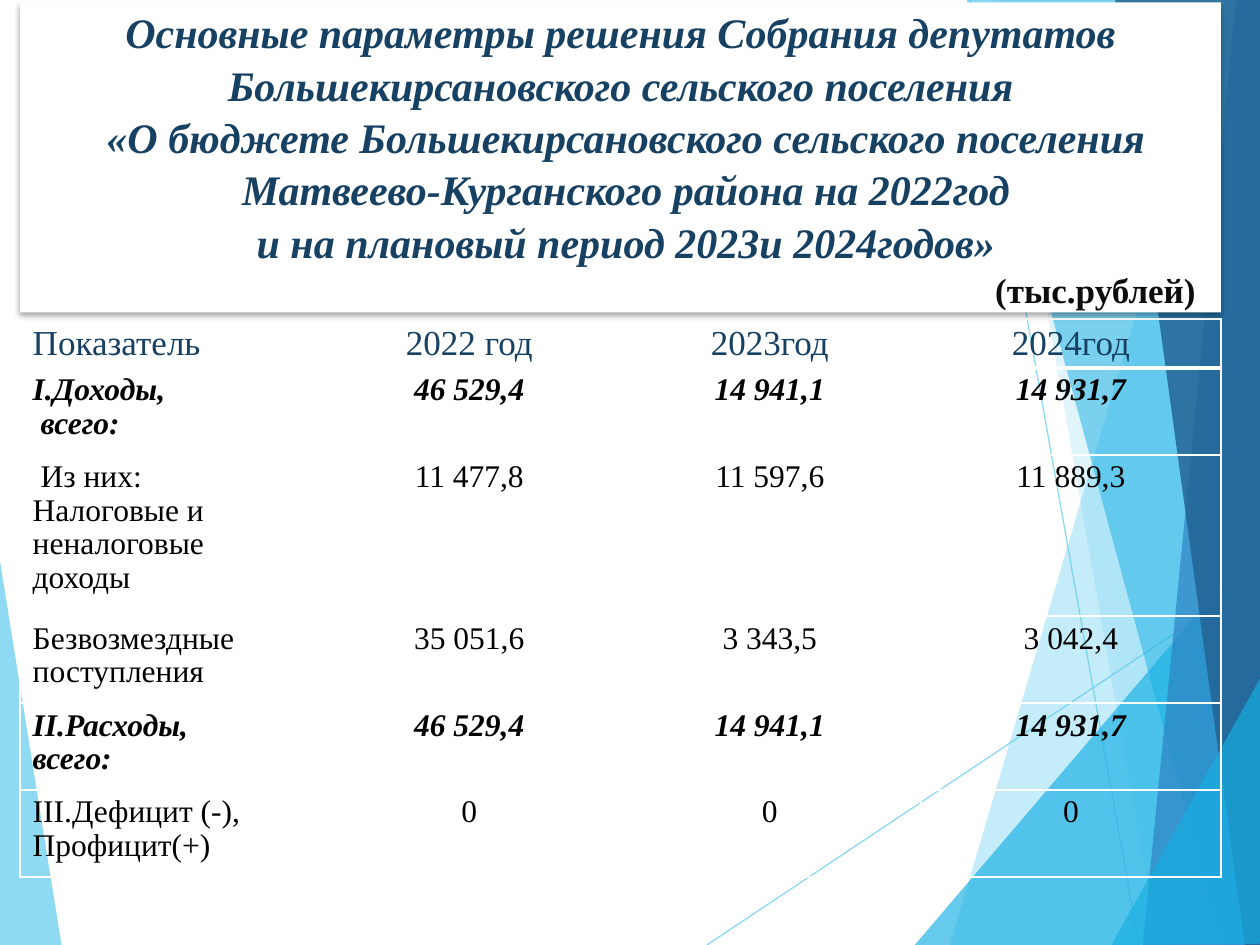
from lxml.etree import SubElement
from pptx import Presentation
from pptx.dml.color import RGBColor
from pptx.enum.shapes import MSO_CONNECTOR, MSO_SHAPE
from pptx.enum.text import MSO_ANCHOR, PP_ALIGN
from pptx.oxml.ns import qn
from pptx.util import Inches, Pt

THEME = {
    "font": "Times New Roman",
    "sky": "5FCBEF", "cyan": "17B0E4", "blue": "2E83C3", "deep": "226292",
    "navy": "174162", "ink": "000000", "soft": "0D0D0D", "white": "FFFFFF",
    "title": 24, "head": 20, "body": 18,
}

BACK = [
    ("sky", 70, [(-0.01, 4.39), (0.49, 7.51), (-0.01, 7.5)]),
    ("sky", 70, [(5.61, 7.5), (10.01, 4.57)]),
    ("sky", 70, [(7.7, 0), (9.04, 7.5)]),
    ("sky", 36, [(9.75, 0), (7.54, 7.5), (10.02, 7.51), (10.01, 0.01)]),
    ("sky", 20, [(7.88, -0.01), (9.19, 7.5), (10.01, 7.5), (10.01, -0.01)]),
    ("cyan", 66, [(7.26, 7.5), (10, 4.29), (10.01, 7.5)]),
    ("cyan", 50, [(7.67, -0.01), (9.7, 7.5), (10.01, 7.49), (10.01, -0.01)]),
    ("blue", 70, [(9.81, -0.01), (9.07, 7.5), (10.01, 7.5), (10, -0.01)]),
    ("deep", 82, [(8.85, -0.01), (9.88, 7.5), (10.02, 7.5), (10, -0.01)]),
    ("cyan", 66, [(8.82, 7.5), (10.02, 5.35), (10.02, 7.49)]),
]

TITLE = [
    "Основные параметры решения Собрания депутатов Большекирсановского сельского поселения",
    " «О бюджете Большекирсановского сельского поселения",
    " Матвеево-Курганского района на 2022год",
    " и на плановый период 2023и 2024годов»",
]
UNIT = "(тыс.рублей)"

ROWS = [
    ("head", 0.39, ["Показатель", "2022 год", "2023год", "2024год"]),
    ("total", 0.69, ["I.Доходы,\n всего:", "46 529,4", "14 941,1", "14 931,7"]),
    ("part", 1.28, [" Из них:\nНалоговые и неналоговые доходы", "11 477,8", "11 597,6", "11 889,3"]),
    ("part", 0.69, ["Безвозмездные поступления", "35 051,6", "3 343,5", "3 042,4"]),
    ("total", 0.69, ["II.Расходы,\nвсего:", "46 529,4", "14 941,1", "14 931,7"]),
    ("part", 0.69, ["III.Дефицит (-),\nПрофицит(+)", "0", "0", "0"]),
]
COLS = [2.38, 2.37, 2.4, 2.38]
LEFT, WIDTH = 0.16, 9.53


def tint(name):
    return RGBColor.from_string(THEME[name])


def fade(part, alpha):
    for node in part.iter(qn("a:srgbClr")):
        SubElement(node, qn("a:alpha"), val=str(alpha * 1000))


def style(para, size, color, bold, slant, align, space):
    para.alignment = align
    para.line_spacing = space
    for run in para.runs:
        font = run.font
        font.name, font.size = THEME["font"], Pt(THEME[size])
        font.bold, font.italic = bold, slant
        font.color.rgb = tint(color)


def draw_back(shapes):
    for color, alpha, spots in BACK:
        (x, y), *rest = [(Inches(a), Inches(b)) for a, b in spots]
        if len(rest) == 1:
            item = shapes.add_connector(MSO_CONNECTOR.STRAIGHT, x, y, *rest[0])
            item.line.color.rgb = tint(color)
            item.line.width = Pt(0.75)
            SubElement(item.element.spPr, qn("a:effectLst"))
        else:
            maker = shapes.build_freeform(x, y)
            maker.add_line_segments(rest, close=True)
            item = maker.convert_to_shape()
            item.shadow.inherit = False
            item.fill.solid()
            item.fill.fore_color.rgb = tint(color)
            item.line.fill.background()
        fade(item.element.spPr, alpha)


def edge(cell, head):
    props = cell._tc.get_or_add_tcPr()
    for spot, side in enumerate(("lnL", "lnR", "lnT", "lnB")):
        width = 3 if head and side == "lnB" else 1
        line = props.makeelement(qn("a:" + side), {"w": str(Pt(width))})
        fill = SubElement(line, qn("a:solidFill"))
        SubElement(fill, qn("a:srgbClr"), val=THEME["white"])
        props.insert(spot, line)


def draw_table(shapes):
    frame = shapes.add_table(len(ROWS), len(COLS), Inches(LEFT), Inches(2.53),
                             Inches(WIDTH), Inches(sum(row[1] for row in ROWS)))
    table = frame.table
    table.first_row = table.horz_banding = False
    for col, width in zip(table.columns, COLS):
        col.width = Inches(width)
    for r, (kind, height, texts) in enumerate(ROWS):
        table.rows[r].height = Inches(height)
        head, bold = kind == "head", kind == "total"
        for c, text in enumerate(texts):
            cell = table.cell(r, c)
            cell.fill.background()
            edge(cell, head)
            if head:
                cell.margin_top, cell.margin_bottom = Inches(0.04), Inches(0.02)
            cell.text_frame.text = text
            for para in cell.text_frame.paragraphs:
                style(para, "head" if head else "body", "navy" if head else "ink",
                      bold, bold, PP_ALIGN.CENTER if c else PP_ALIGN.LEFT,
                      1 if head else 0.96)


def draw_title(shapes):
    box = shapes.add_shape(MSO_SHAPE.RECTANGLE, Inches(LEFT), Inches(0.02),
                           Inches(WIDTH), Inches(2.46))
    box.fill.solid()
    box.fill.fore_color.rgb = tint("white")
    box.line.fill.background()
    box.shadow.inherit = False
    glow = SubElement(box.element.spPr.find(qn("a:effectLst")), qn("a:outerShdw"),
                      blurRad=str(Pt(3.5)), dist=str(Pt(2.2)), dir="5400000",
                      rotWithShape="0")
    SubElement(glow, qn("a:srgbClr"), val=THEME["ink"])
    fade(glow, 32)
    frame = box.text_frame
    frame.word_wrap = True
    frame.vertical_anchor = MSO_ANCHOR.MIDDLE
    frame.margin_left = frame.margin_right = Inches(0.2)
    frame.text = "\n".join(TITLE + [UNIT])
    *lines, unit = frame.paragraphs
    for para in lines:
        style(para, "title", "navy", True, True, PP_ALIGN.CENTER, 1.04)
    style(unit, "head", "soft", True, False, PP_ALIGN.RIGHT, 1.04)


def main():
    deck = Presentation()
    deck.slide_width, deck.slide_height = Inches(10), Inches(7.5)
    shapes = deck.slides.add_slide(deck.slide_layouts[6]).shapes
    draw_back(shapes)
    draw_table(shapes)
    draw_title(shapes)
    deck.save("out.pptx")


if __name__ == "__main__":
    main()
